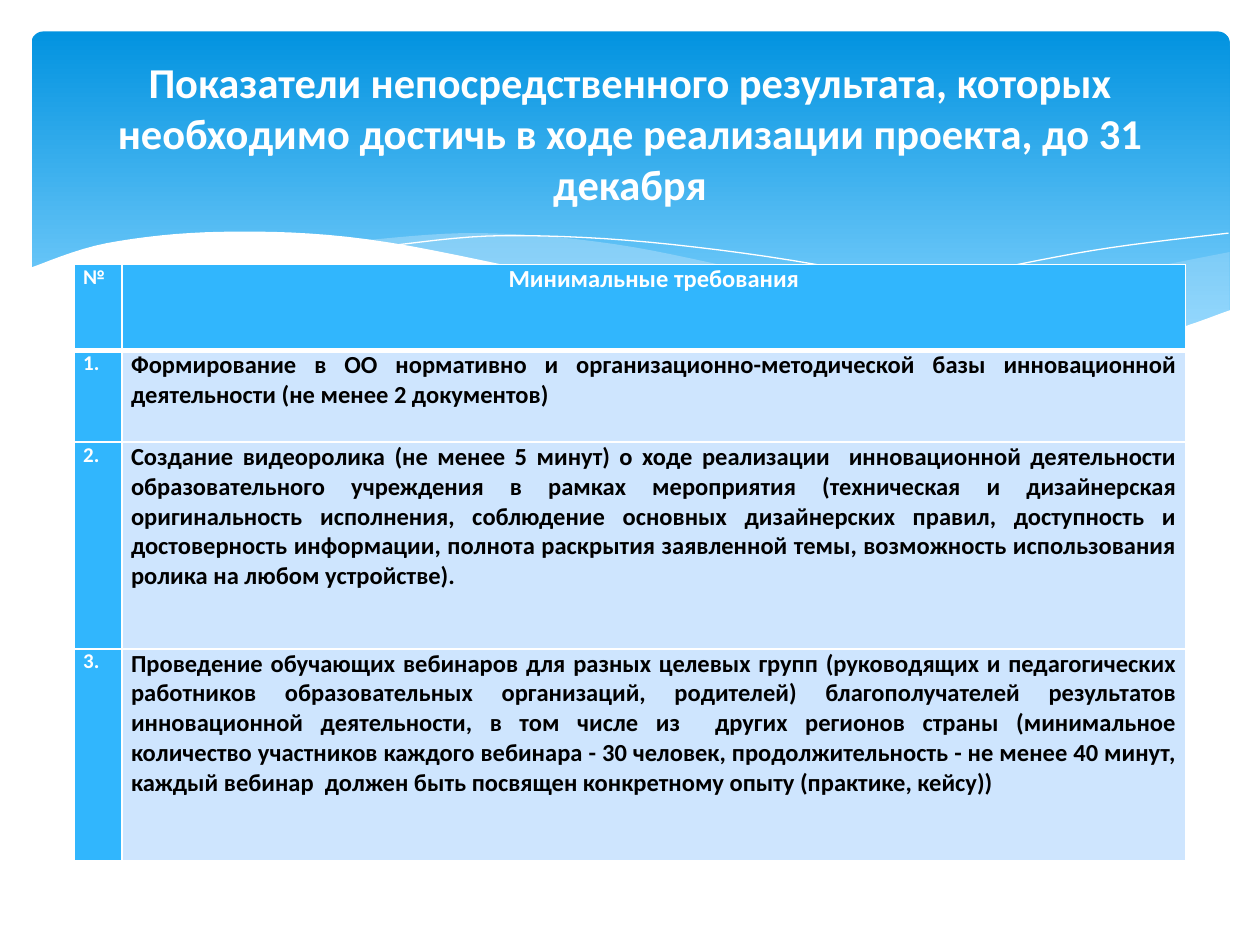
from dataclasses import dataclass
from typing import Optional

from lxml.etree import SubElement
from pptx import Presentation
from pptx.dml.color import RGBColor
from pptx.enum.shapes import MSO_SHAPE as Shape
from pptx.enum.text import MSO_ANCHOR as Anchor, PP_ALIGN as Align
from pptx.oxml.ns import qn
from pptx.util import Inches, Pt

WHITE = RGBColor(0xFF, 0xFF, 0xFF)
BLACK = RGBColor(0x00, 0x00, 0x00)
SKY_TOP = RGBColor(0x02, 0x93, 0xE0)
SKY_BOTTOM = RGBColor(0x83, 0xD3, 0xFE)
MIST = RGBColor(0xC6, 0xE7, 0xFC)
ACCENT = RGBColor(0x31, 0xB6, 0xFD)
PALE = RGBColor(0xCE, 0xE5, 0xFE)
FONT = "Calibri"
STEPS = 8  # segments drawn between two neighbouring anchors

Point = tuple[float, float]


@dataclass
class Wave:
    """Smooth edges through anchors in inches; without a fill, a thin white curve."""
    edges: list[list[Point]]
    fill: Optional[RGBColor] = None
    opacity: int = 100


WAVES = [
    # Right-hand mist
    Wave([[(9.76, 2), (8.61, 2.23), (7.53, 2.48), (6.61, 2.65)],
          [(6.61, 2.65), (8.03, 2.78), (9.13, 2.67), (9.76, 2.47)]], MIST, 29),
    # Central mist
    Wave([[(2.86, 1.91), (3.8, 1.85), (4.89, 1.94), (6.29, 2.22), (8.93, 2.73)],
          [(8.93, 2.73), (8.07, 2.78), (6.65, 2.66), (4.49, 2.22), (2.86, 1.91)]], MIST, 40),
    # Thin curves
    Wave([[(3.09, 1.95), (4.01, 1.87), (5.33, 1.94), (6.95, 2.19), (9.07, 2.72)]]),
    Wave([[(6.13, 2.57), (7.48, 2.23), (8.66, 1.99), (9.75, 1.85)]]),
    # White ground under the banner
    Wave([[(9.77, 2.46), (9.1, 2.67), (8.09, 2.77), (6.68, 2.65), (4.47, 2.2),
           (2.92, 1.9), (1.77, 1.84), (0.85, 1.93), (0.23, 2.13)],
          [(0.23, 3.29), (9.77, 3.29)]], WHITE),
]

TITLE = ("Показатели непосредственного результата, которых необходимо достичь "
         "в ходе реализации проекта, до 31 декабря")
HEADER = ("№", "Минимальные требования")
REQUIREMENTS = [
    "Формирование в ОО нормативно и организационно-методической базы инновационной "
    "деятельности (не менее 2 документов)",
    "Создание видеоролика (не менее 5 минут) о ходе реализации  инновационной деятельности "
    "образовательного учреждения в рамках мероприятия (техническая и дизайнерская "
    "оригинальность исполнения, соблюдение основных дизайнерских правил, доступность и "
    "достоверность информации, полнота раскрытия заявленной темы, возможность использования "
    "ролика на любом устройстве).",
    "Проведение обучающих вебинаров для разных целевых групп (руководящих и педагогических "
    "работников образовательных организаций, родителей) благополучателей результатов "
    "инновационной деятельности, в том числе из  других регионов страны (минимальное "
    "количество участников каждого вебинара - 30 человек, продолжительность - не менее 40 "
    "минут, каждый вебинар  должен быть посвящен конкретному опыту (практике, кейсу))",
]
COLUMN_WIDTHS = (0.38, 8.44)
ROW_HEIGHTS = (0.68, 0.73, 1.64, 1.68)


def write(frame, text: str, size: float, color: RGBColor, align: Align) -> None:
    paragraph = frame.paragraphs[0]
    paragraph.text = text
    paragraph.alignment = align
    font = paragraph.font
    font.name, font.size, font.bold = FONT, Pt(size), True
    font.color.rgb = color


def draw_banner(shapes) -> None:
    banner = shapes.add_shape(Shape.ROUNDED_RECTANGLE, Inches(0.25), Inches(0.25),
                              Inches(9.51), Inches(2.7))
    banner.adjustments[0] = 0.034
    banner.shadow.inherit = False
    banner.line.fill.background()
    banner.fill.gradient()
    banner.fill.gradient_angle = 270
    for stop, color, position in zip(banner.fill.gradient_stops,
                                     (SKY_TOP, SKY_BOTTOM), (0, 0.9)):
        stop.color.rgb = color
        stop.position = position


def smooth(anchors: list[Point]) -> list[Point]:
    """Catmull-Rom curve through the anchors."""
    padded = [anchors[0], *anchors, anchors[-1]]
    curve = [anchors[0]]
    for a, b, c, d in zip(padded, padded[1:], padded[2:], padded[3:]):
        for step in range(1, STEPS + 1):
            t = step / STEPS
            x, y = (q + t / 2 * (r - p + t * (2 * p - 5 * q + 4 * r - s
                                              + t * (3 * q - p - 3 * r + s)))
                    for p, q, r, s in zip(a, b, c, d))
            curve.append((x, y))
    return curve


def draw_wave(shapes, wave: Wave) -> None:
    start, *rest = [(Inches(x), Inches(y)) for edge in wave.edges for x, y in smooth(edge)]
    builder = shapes.build_freeform(*start)
    builder.add_line_segments(rest, close=wave.fill is not None)
    outline = builder.convert_to_shape()
    outline.shadow.inherit = False
    if wave.fill is None:
        outline.fill.background()
        outline.line.color.rgb = WHITE
        outline.line.width = Pt(0)
        return
    outline.line.fill.background()
    outline.fill.solid()
    outline.fill.fore_color.rgb = wave.fill
    if wave.opacity < 100:
        color = outline._element.spPr.find(qn("a:solidFill"))[0]
        SubElement(color, qn("a:alpha"), val=str(wave.opacity * 1000))


def set_borders(cell, top: float, bottom: float) -> None:
    properties = cell._tc.get_or_add_tcPr()
    for side, width in (("L", 1), ("R", 1), ("T", top), ("B", bottom)):
        border = SubElement(properties, qn(f"a:ln{side}"), w=str(int(Pt(width))))
        fill = SubElement(border, qn("a:solidFill"))
        SubElement(fill, qn("a:srgbClr"), val=str(WHITE))


def draw_requirements(shapes) -> None:
    rows = [HEADER] + [(f"{n}.", text) for n, text in enumerate(REQUIREMENTS, 1)]
    table = shapes.add_table(len(rows), len(HEADER), Inches(0.59), Inches(2.1),
                             Inches(sum(COLUMN_WIDTHS)), Inches(sum(ROW_HEIGHTS))).table
    for column, width in zip(table.columns, COLUMN_WIDTHS):
        column.width = Inches(width)
    for row, height in zip(table.rows, ROW_HEIGHTS):
        row.height = Inches(height)
    for r, row in enumerate(rows):
        for c, text in enumerate(row):
            is_body = r > 0 and c > 0
            cell = table.cell(r, c)
            cell.margin_left = cell.margin_right = Inches(0.07)
            cell.margin_top = cell.margin_bottom = 0
            set_borders(cell, top=3 if r == 1 else 1, bottom=3 if r == 0 else 1)
            cell.fill.solid()
            cell.fill.fore_color.rgb = PALE if is_body else ACCENT
            write(cell.text_frame, text, 14 if c else 12, BLACK if is_body else WHITE,
                  Align.CENTER if (r, c) == (0, 1) else Align.JUSTIFY)


def draw_title(shapes) -> None:
    frame = shapes.add_textbox(Inches(0.5), Inches(0.37), Inches(9), Inches(1.37)).text_frame
    frame.word_wrap = True
    frame.vertical_anchor = Anchor.MIDDLE
    write(frame, TITLE, 24.3, WHITE, Align.CENTER)


def main() -> None:
    presentation = Presentation()
    presentation.slide_width, presentation.slide_height = Inches(10), Inches(7.5)
    shapes = presentation.slides.add_slide(presentation.slide_layouts[6]).shapes
    draw_banner(shapes)
    for wave in WAVES:
        draw_wave(shapes, wave)
    draw_requirements(shapes)
    draw_title(shapes)
    presentation.save("out.pptx")


if __name__ == "__main__":
    main()
